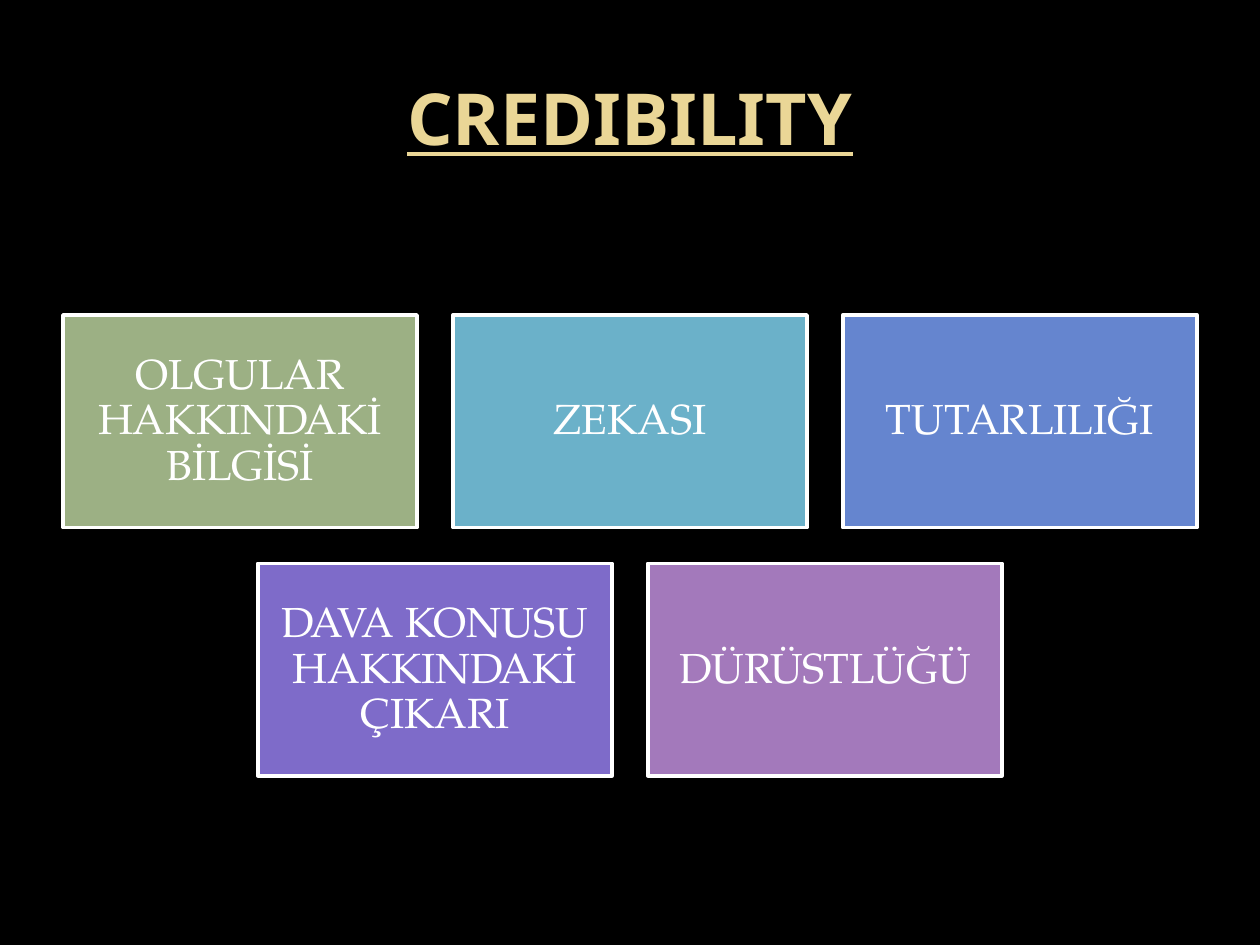
import pptx
import pptx.util
import pptx.dml.color
import pptx.enum.shapes
import pptx.enum.text
from pptx.util import Cm

COLORS = {
    "background": "000000",
    "title": "EAD696",
    "white": "FFFFFF",
    "green": "9CB084",
    "teal": "6BB1C9",
    "blue": "6585CF",
    "violet": "7E6BC9",
    "mauve": "A379BB",
}

QUALITY_ROWS = [
    [
        ("OLGULAR HAKKINDAKİ BİLGİSİ", "green"),
        ("ZEKASI", "teal"),
        ("TUTARLILIĞI", "blue"),
    ],
    [
        ("DAVA KONUSU HAKKINDAKİ ÇIKARI", "violet"),
        ("DÜRÜSTLÜĞÜ", "mauve"),
    ],
]


def rgb(name):
    return pptx.dml.color.RGBColor.from_string(COLORS[name])


def write_text(holder, text, *, font, size, color, bold=False, underline=False,
               inset=Cm(0.25), line_spacing=1.0):
    frame = holder.text_frame
    frame.word_wrap = True
    frame.vertical_anchor = pptx.enum.text.MSO_ANCHOR.MIDDLE
    frame.margin_left = frame.margin_right = inset
    frame.margin_top = frame.margin_bottom = inset
    paragraph = frame.paragraphs[0]
    paragraph.alignment = pptx.enum.text.PP_ALIGN.CENTER
    paragraph.line_spacing = line_spacing
    run = paragraph.add_run()
    run.text = text
    run.font.name = font
    run.font.size = pptx.util.Pt(size)
    run.font.bold = bold
    run.font.underline = underline
    run.font.color.rgb = rgb(color)


def add_heading(slide, left, top, width, height):
    heading = slide.shapes.add_textbox(left, top, width, height)
    write_text(heading, "CREDIBILITY", font="Noto Sans", size=41,
               color="title", bold=True, underline=True)


def add_quality(slide, label, color, left, top, width, height):
    card = slide.shapes.add_shape(
        pptx.enum.shapes.MSO_SHAPE.RECTANGLE, left, top, width, height)
    card.shadow.inherit = False
    card.fill.solid()
    card.fill.fore_color.rgb = rgb(color)
    card.line.color.rgb = rgb("white")
    card.line.width = pptx.util.Pt(2)
    write_text(card, label, font="TeX Gyre Pagella", size=24,
               color="white", line_spacing=0.9)


def add_quality_grid(slide, left, top, width, height):
    gap = Cm(0.72)
    columns = max(len(row) for row in QUALITY_ROWS)
    card_width = (width - gap * (columns - 1)) // columns
    card_height = (height - gap * (len(QUALITY_ROWS) - 1)) // len(QUALITY_ROWS)
    for row_index, row in enumerate(QUALITY_ROWS):
        row_width = len(row) * (card_width + gap) - gap
        row_left = left + (width - row_width) // 2
        row_top = top + row_index * (card_height + gap)
        for column, (label, color) in enumerate(row):
            add_quality(slide, label, color,
                        row_left + column * (card_width + gap), row_top,
                        card_width, card_height)


def main():
    deck = pptx.Presentation()
    deck.slide_width, deck.slide_height = Cm(25.4), Cm(19.05)
    slide = deck.slides.add_slide(deck.slide_layouts[6])
    slide.background.fill.solid()
    slide.background.fill.fore_color.rgb = rgb("background")
    margin = Cm(1.27)
    content_width = deck.slide_width - 2 * margin
    add_heading(slide, margin, Cm(0.76), content_width, Cm(3.18))
    add_quality_grid(slide, margin, Cm(6.35), content_width, Cm(9.29))
    deck.save("out.pptx")


if __name__ == "__main__":
    main()
